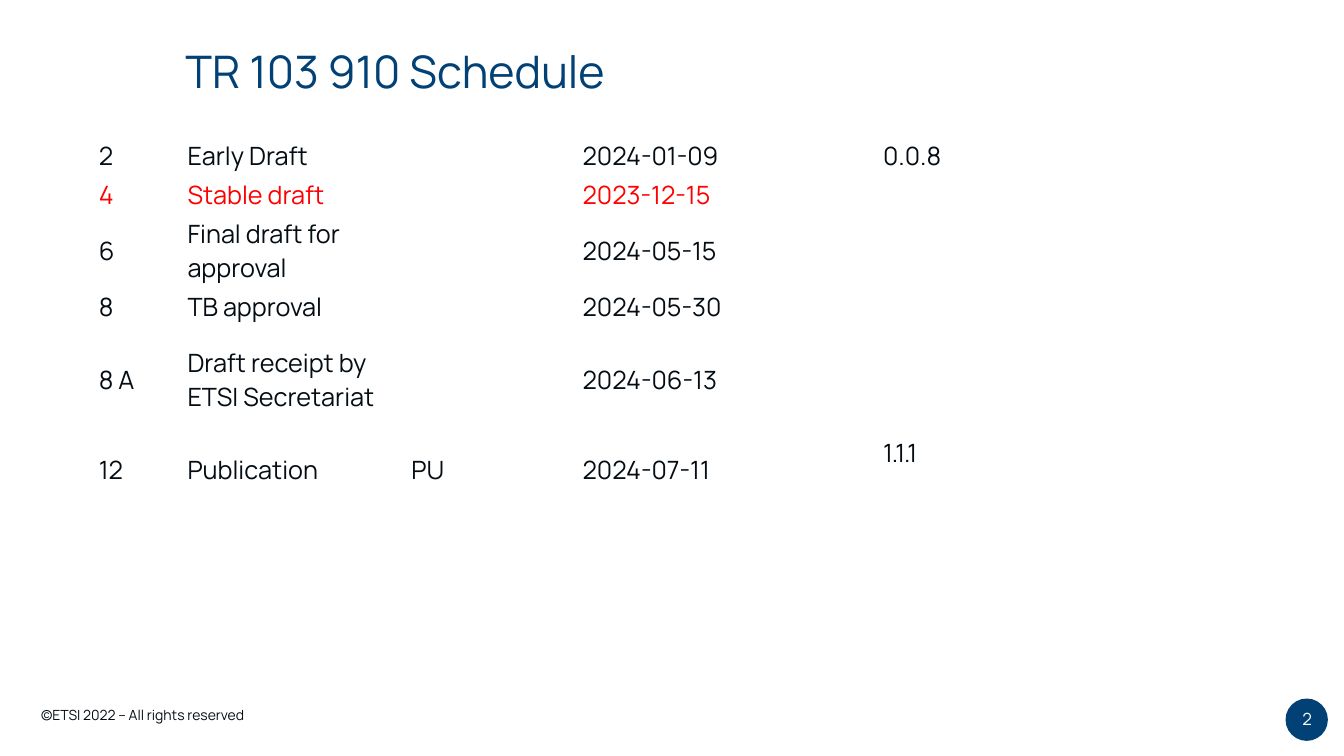
"""Build the TR 103 910 schedule slide."""
import pptx
import pptx.util
import pptx.dml.color
import pptx.enum.shapes
import pptx.enum.text

Inches = pptx.util.Inches
Pt = pptx.util.Pt
RGBColor = pptx.dml.color.RGBColor
ALIGN = pptx.enum.text.PP_ALIGN
ANCHOR = pptx.enum.text.MSO_ANCHOR

INK = RGBColor(0x05, 0x0D, 0x14)
NAVY = RGBColor(0x01, 0x41, 0x76)
RED = RGBColor(0xFF, 0x00, 0x00)
WHITE = RGBColor(0xFF, 0xFF, 0xFF)
FONT = "Manrope"


def write(frame, text, size, color):
    para = frame.paragraphs[0]
    run = para.add_run()
    run.text = text
    run.font.name = FONT
    run.font.size = Pt(size)
    run.font.color.rgb = color
    return para


def label(box, text, size, color, wrap=True):
    frame = slide.shapes.add_textbox(*map(Inches, box)).text_frame
    frame.word_wrap = wrap
    return frame, write(frame, text, size, color)


deck = pptx.Presentation()
deck.slide_width = Inches(13.33)
deck.slide_height = Inches(7.5)
slide = deck.slides.add_slide(deck.slide_layouts[6])

label((0.31, 6.96, 2.36, 0.27), "©ETSI 2022 – All rights reserved", 10, INK, False)

badge = slide.shapes.add_shape(
    pptx.enum.shapes.MSO_SHAPE.OVAL,
    Inches(12.75), Inches(6.93), Inches(0.42), Inches(0.42))
badge.shadow.inherit = False
badge.fill.solid()
badge.fill.fore_color.rgb = NAVY
badge.line.fill.background()

frame, para = label((12.65, 6.93, 0.63, 0.4), "2", 12, WHITE)
frame.vertical_anchor = ANCHOR.MIDDLE
para.alignment = ALIGN.CENTER

frame, para = label((1.74, 0.44, 8.28, 1.11), "TR 103 910 Schedule", 32, NAVY)
para.line_spacing = 0.9

widths = [0.88, 2.22, 1.58, 0.1, 2.98, 1.55]
stages = [
    (0.39, INK, ["2", "Early Draft", "", "", "2024-01-09", "0.0.8"]),
    (0.39, RED, ["4", "Stable draft", "", "", "2023-12-15", ""]),
    (0.72, INK, ["6", "Final draft for approval", "", "", "2024-05-15", ""]),
    (0.39, INK, ["8", "TB approval", "", "", "2024-05-30", ""]),
    (1.06, INK, ["8 A", "Draft receipt by ETSI Secretariat", "", "", "2024-06-13", ""]),
    (0.72, INK, ["12", "Publication", "PU", "", "2024-07-11", "1.1.1"]),
]
table = slide.shapes.add_table(
    len(stages), len(widths), Inches(0.94), Inches(1.35),
    Inches(sum(widths)), Inches(sum(stage[0] for stage in stages))).table
table.first_row = False
table.horz_banding = False
for column, width in zip(table.columns, widths):
    column.width = Inches(width)

for row, (height, color, texts) in zip(table.rows, stages):
    row.height = Inches(height)
    for cell, text in zip(row.cells, texts):
        cell.fill.background()
        cell.margin_left = cell.margin_right = Inches(0.04)
        cell.margin_top = cell.margin_bottom = Inches(0.02)
        cell.vertical_anchor = ANCHOR.MIDDLE
        if text:
            write(cell.text_frame, text, 18, color)

table.cell(len(stages) - 1, len(widths) - 1).vertical_anchor = ANCHOR.TOP

deck.save("out.pptx")
